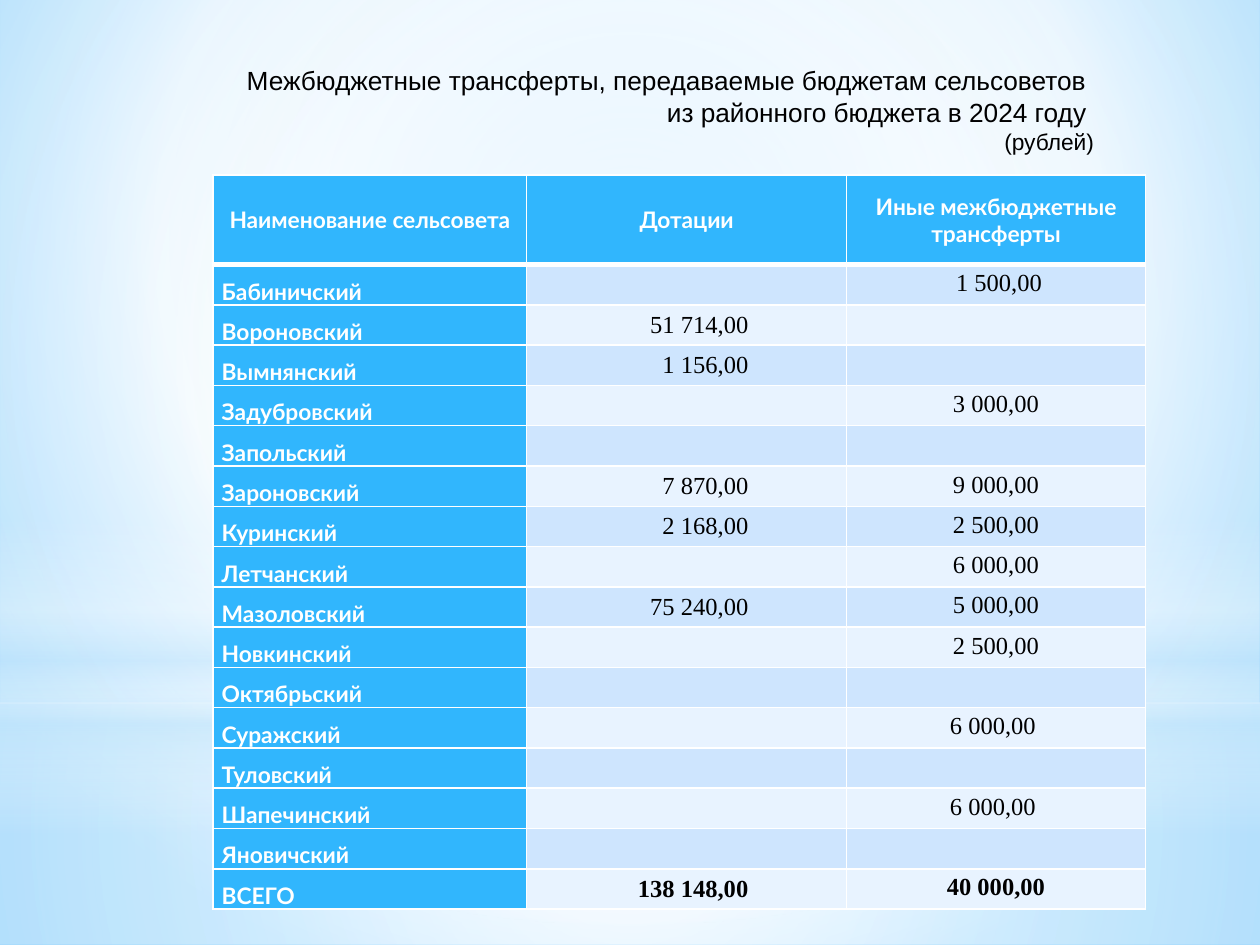
"""Slide with a table of budget transfers to village councils in 2024."""
from lxml import etree
from pptx import Presentation, util as u
from pptx.dml.color import RGBColor
from pptx.enum import shapes, text
from pptx.oxml import ns

HUES = {"white": "FFFFFF", "black": "000000", "blue": "31B6FD",
        "band": "CEE5FE", "pale": "E8F3FF", "mist": "C6E7FC",
        "sky": "B0E0FF", "deep": "6BC5FF"}
SIDE = text.PP_ALIGN
MID = text.MSO_ANCHOR.MIDDLE
LOW = text.MSO_ANCHOR.BOTTOM


def write(para, words, font="Arial", size=15, hue="black", bold=False, side=SIDE.RIGHT, lead=None):
    """Fill a paragraph with one formatted run."""
    para.alignment = side
    para.line_spacing = lead
    run = para.add_run()
    run.text = words
    run.font.name = font
    run.font.size = u.Pt(size)
    run.font.bold = bold
    run.font.color.rgb = RGBColor.from_string(HUES[hue])


def blend(owner, stops, rect=None):
    """Swap the solid fill of an element for a gradient."""
    solid = next(owner.iter(ns.qn("a:solidFill")))
    grad = etree.Element(ns.qn("a:gradFill"), rotWithShape="1")
    group = etree.SubElement(grad, ns.qn("a:gsLst"))
    for spot, hue, alpha in stops:
        stop = etree.SubElement(group, ns.qn("a:gs"), pos=str(spot * 1000))
        tone = etree.SubElement(stop, ns.qn("a:srgbClr"), val=HUES[hue])
        if alpha < 100:
            etree.SubElement(tone, ns.qn("a:alpha"), val=str(alpha * 1000))
    if rect:
        way = etree.SubElement(grad, ns.qn("a:path"), path="circle")
        sides = {key: str(val * 1000) for key, val in zip("ltrb", rect)}
        etree.SubElement(way, ns.qn("a:fillToRect"), **sides)
    else:
        etree.SubElement(grad, ns.qn("a:lin"), ang="5400000", scaled="0")
    solid.getparent().replace(solid, grad)


deck = Presentation()
deck.slide_width, deck.slide_height = u.Inches(10), u.Inches(7.5)
slide = deck.slides.add_slide(deck.slide_layouts[6])

slide.background.fill.solid()
blend(slide.element, [(0, "sky", 100), (60, "white", 100), (100, "deep", 100)], (20, 10, 20, 60))

RECT, OVAL = shapes.MSO_SHAPE.RECTANGLE, shapes.MSO_SHAPE.OVAL
CORE = (50, 50, 50, 50)
glows = [
    (RECT, 5.58, 1.92, [(0, "white", 91), (37, "white", 76), (100, "mist", 79)], CORE),
    (RECT, 0, 5.58, [(0, "white", 89), (48, "white", 62), (100, "mist", 79)], CORE),
    (RECT, 4.12, 2.5, [(0, "white", 0), (29, "white", 30), (45, "mist", 40),
                       (55, "white", 26), (65, "mist", 60), (100, "white", 0)], None),
    (OVAL, 1.75, 5.58, [(0, "white", 100), (56, "white", 0)], CORE),
]
for kind, top, high, stops, rect in glows:
    glow = slide.shapes.add_shape(kind, 0, u.Inches(top), u.Inches(10), u.Inches(high))
    glow.shadow.inherit = False
    glow.line.fill.background()
    glow.fill.solid()
    blend(glow.element, stops, rect)

rows = [
    ("Наименование сельсовета", "Дотации", "Иные межбюджетные трансферты"),
    ("Бабиничский", "", " 1 500,00"),
    ("Вороновский", "51 714,00", ""),
    ("Вымнянский", "1 156,00", ""),
    ("Задубровский", "", "3 000,00"),
    ("Запольский", "", ""),
    ("Зароновский", "7 870,00", "9 000,00"),
    ("Куринский", "2 168,00", "2 500,00"),
    ("Летчанский", "", "6 000,00"),
    ("Мазоловский", "75 240,00", "5 000,00"),
    ("Новкинский", "", " 2 500,00 "),
    ("Октябрьский", "", ""),
    ("Суражский", "", "6 000,00 "),
    ("Туловский", "", ""),
    ("Шапечинский", "", "6 000,00 "),
    ("Яновичский", "", ""),
    ("ВСЕГО", "138 148,00", "40 000,00"),
]
frame = slide.shapes.add_table(len(rows), 3, u.Inches(1.69), u.Inches(1.39),
                               u.Inches(7.4), u.Inches(5.82))
table = frame.table
table.horz_banding = False
for col, wide in zip(table.columns, (2.49, 2.54, 2.37)):
    col.width = u.Inches(wide)

for r, row in enumerate(rows):
    table.rows[r].height = u.Inches(0.32 if r else 0.71)
    for c, words in enumerate(row):
        cell = table.cell(r, c)
        head = r == 0 or c == 0
        cell.margin_top = cell.margin_bottom = 0
        cell.margin_left = u.Inches(0.07)
        cell.margin_right = u.Inches(0.78 if r and c == 1 else 0.07)
        cell.vertical_anchor = LOW if r and c == 0 else MID
        hue = "blue" if head else "band" if r % 2 else "pale"
        cell.fill.solid()
        cell.fill.fore_color.rgb = RGBColor.from_string(HUES[hue])
        props = cell._tc.get_or_add_tcPr()
        for n, edge in enumerate("LRTB"):
            thick = (r == 0 and edge == "B") or (r == 1 and edge == "T")
            line = etree.Element(ns.qn("a:ln" + edge), w=str(u.Pt(3 if thick else 1)))
            paint = etree.SubElement(line, ns.qn("a:solidFill"))
            etree.SubElement(paint, ns.qn("a:srgbClr"), val=HUES["white"])
            props.insert(n, line)
        para = cell.text_frame.paragraphs[0]
        if head:
            write(para, words, font="Lato", size=13, hue="white", bold=True,
                  side=SIDE.LEFT if r else SIDE.CENTER)
        elif words:
            write(para, words, font="Times New Roman", size=14, bold=row[0] == "ВСЕГО",
                  side=SIDE.RIGHT if c == 1 else SIDE.CENTER,
                  lead=u.Pt(14) if c == 2 else None)

title = slide.shapes.add_textbox(u.Inches(1.45), u.Inches(0.46), u.Inches(7.33), u.Inches(0.82))
body = title.text_frame
body.word_wrap = True
body.auto_size = text.MSO_AUTO_SIZE.SHAPE_TO_FIT_TEXT
body.vertical_anchor = MID
lines = [("Межбюджетные трансферты, передаваемые бюджетам сельсоветов ", 15),
         ("из районного бюджета в 2024 году ", 15), ("(рублей)", 13)]
for n, (words, size) in enumerate(lines):
    write(body.add_paragraph() if n else body.paragraphs[0], words, size=size)

deck.save("out.pptx")
